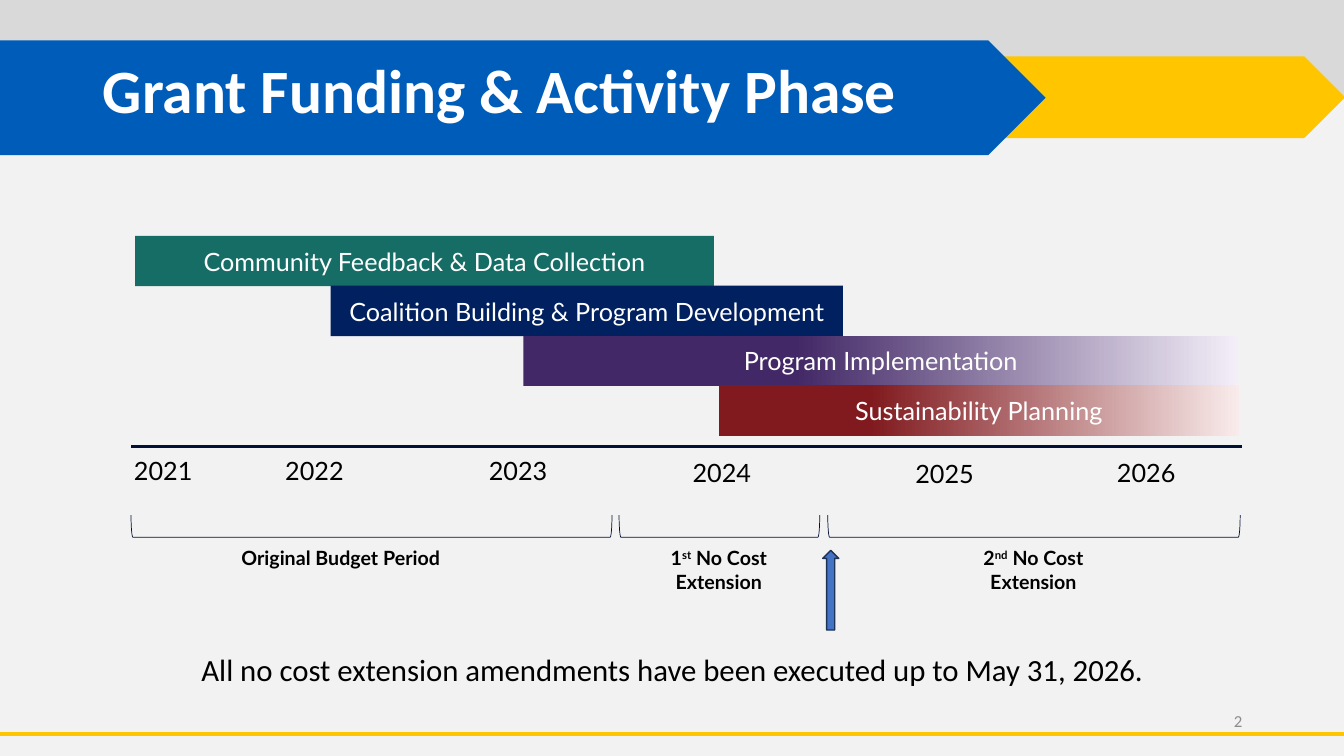
from dataclasses import dataclass

from lxml.etree import SubElement
from pptx import Presentation
from pptx.dml.color import RGBColor
from pptx.enum.shapes import MSO_CONNECTOR, MSO_SHAPE
from pptx.enum.text import MSO_ANCHOR, PP_ALIGN
from pptx.oxml.ns import qn
from pptx.util import Inches, Pt

TITLE = "Grant Funding & Activity Phase"
NOTE = "All no cost extension amendments have been executed up to May 31, 2026."
PAGE_NUMBER = "2"

# shape, left, top, width, height, fill
BANNER = [
    (MSO_SHAPE.RECTANGLE, 0, 0, 13.33, 0.95, "D9D9D9"),
    (MSO_SHAPE.PENTAGON, 7.09, 0.56, 6.25, 0.81, "FFC600"),
    (MSO_SHAPE.PENTAGON, 0, 0.4, 10.37, 1.14, "005CB9"),
]

# label, left, width, fill, (fade start, fade colour)
PHASES = [
    ("Community Feedback & Data Collection", 1.34, 5.74, "166D65", None),
    ("Coalition Building & Program Development", 3.28, 5.08, "002060", None),
    ("Program Implementation", 5.19, 7.09, "422866", (0.38, "F3EEF8")),
    ("Sustainability Planning", 7.13, 5.16, "801A1E", (0.29, "F9EBEB")),
]

# year, left, top
YEARS = [
    ("2021", 1.23, 4.47), ("2022", 2.73, 4.47), ("2023", 4.75, 4.47),
    ("2024", 6.77, 4.49), ("2025", 8.98, 4.5), ("2026", 10.98, 4.49),
]

# bracket left, bracket right, label left, label width, label as (text, raised) spans
PERIODS = [
    (1.3, 6.07, 2.24, 2.28, [("Original Budget Period", False)]),
    (6.14, 8.13, 6.46, 1.34, [("1", False), ("st", True), (" No Cost Extension", False)]),
    (8.21, 12.3, 9.58, 1.34, [("2", False), ("nd", True), (" No Cost Extension", False)]),
]


@dataclass(frozen=True)
class Theme:
    background: str = "F2F2F2"
    gold: str = "FFC600"
    axis: str = "011034"
    arrow: str = "4472C4"
    arrow_edge: str = "1E3256"
    white: str = "FFFFFF"
    black: str = "000000"
    grey: str = "8C8C8C"
    heading_font: str = "Calibri"
    chart_font: str = "Lato"
    title_size: int = 44
    note_size: int = 22
    chart_size: int = 18
    period_size: int = 14
    number_size: int = 12


THEME = Theme()
BAR_TOP, BAR_PITCH, BAR_HEIGHT = 2.34, 0.495, 0.5
BRACKET_TOP, BRACKET_DEPTH = 5.11, 0.22


def color(code):
    return RGBColor.from_string(code)


def write(shape, text, *, size, font=THEME.chart_font, ink=THEME.black, bold=False,
          align=PP_ALIGN.LEFT, anchor=MSO_ANCHOR.TOP, line_spacing=None):
    """Fill a shape with one paragraph; text is a string or (text, raised) spans."""
    frame = shape.text_frame
    frame.word_wrap = True
    frame.vertical_anchor = anchor
    para = frame.paragraphs[0]
    para.alignment = align
    para.line_spacing = line_spacing
    for words, raised in [(text, False)] if isinstance(text, str) else text:
        span = para.add_run()
        span.text = words
        span.font.name, span.font.size, span.font.bold = font, Pt(size), bold
        span.font.color.rgb = color(ink)
        if raised:
            span.font._element.set("baseline", "30000")


def add_text(page, text, left, top, width, height, **style):
    box = page.shapes.add_textbox(Inches(left), Inches(top), Inches(width), Inches(height))
    write(box, text, **style)


def add_block(page, kind, left, top, width, height, fill=None, line=None, weight=1):
    block = page.shapes.add_shape(
        kind, Inches(left), Inches(top), Inches(width), Inches(height))
    block.shadow.inherit = False
    if fill:
        block.fill.solid()
        block.fill.fore_color.rgb = color(fill)
    else:
        block.fill.background()
    if line:
        block.line.color.rgb = color(line)
        block.line.width = Pt(weight)
    else:
        block.line.fill.background()
    return block


def add_rule(page, left, right, y, ink, weight):
    rule = page.shapes.add_connector(
        MSO_CONNECTOR.STRAIGHT, Inches(left), Inches(y), Inches(right), Inches(y))
    rule.line.color.rgb = color(ink)
    rule.line.width = Pt(weight)
    SubElement(rule._element.spPr, qn("a:effectLst"))


def fade(block, start, first, last):
    block.fill.gradient()
    block.fill.gradient_angle = 0
    for stop, position, ink in zip(block.fill.gradient_stops, (start, 1), (first, last)):
        stop.position = position
        stop.color.rgb = color(ink)


def add_bracket(page, left, right):
    """Draw an upward-opening bracket: a left bracket turned about its centre."""
    span = right - left
    bracket = add_block(
        page, MSO_SHAPE.LEFT_BRACKET,
        (left + right - BRACKET_DEPTH) / 2, BRACKET_TOP + (BRACKET_DEPTH - span) / 2,
        BRACKET_DEPTH, span, line=THEME.axis, weight=0.5)
    bracket.rotation = 270


def add_heading(page):
    for part in BANNER:
        add_block(page, *part)
    add_rule(page, 0, 13.33, 7.28, THEME.gold, 3)
    title = page.shapes.title
    title.left, title.top = Inches(0.92), Inches(0.2)
    title.width, title.height = Inches(11.5), Inches(1.45)
    write(title, TITLE, size=THEME.title_size, font=THEME.heading_font, ink=THEME.white,
          bold=True, anchor=MSO_ANCHOR.MIDDLE, line_spacing=0.9)
    # Bring the title in front of the banner
    title._element.getparent().append(title._element)


def add_timeline(page):
    for row, (label, left, width, fill, fading) in enumerate(PHASES):
        bar = add_block(page, MSO_SHAPE.RECTANGLE, left, BAR_TOP + row * BAR_PITCH,
                        width, BAR_HEIGHT, fill)
        if fading:
            fade(bar, fading[0], fill, fading[1])
        write(bar, label, size=THEME.chart_size, ink=THEME.white,
              align=PP_ALIGN.CENTER, anchor=MSO_ANCHOR.MIDDLE)
    add_rule(page, 1.3, 12.32, 4.43, THEME.axis, 1.5)
    for year, left, top in YEARS:
        add_text(page, year, left, top, 1.31, 0.49, size=THEME.chart_size)
    for start, end, left, width, label in PERIODS:
        add_bracket(page, start, end)
        add_text(page, label, left, 5.37, width, 0.59, size=THEME.period_size,
                 bold=True, align=PP_ALIGN.CENTER)


def main():
    deck = Presentation()
    deck.slide_width, deck.slide_height = Inches(13.33), Inches(7.5)
    page = deck.slides.add_slide(deck.slide_layouts.get_by_name("Title Only"))
    page.background.fill.solid()
    page.background.fill.fore_color.rgb = color(THEME.background)
    add_heading(page)
    add_timeline(page)
    add_text(page, NOTE, 1.9, 6.41, 9.83, 0.47, size=THEME.note_size,
             font=THEME.heading_font)
    add_block(page, MSO_SHAPE.UP_ARROW, 8.16, 5.46, 0.16, 0.79,
              THEME.arrow, THEME.arrow_edge)
    add_text(page, PAGE_NUMBER, 9.42, 6.95, 3, 0.4, size=THEME.number_size,
             font=THEME.heading_font, ink=THEME.grey, align=PP_ALIGN.RIGHT,
             anchor=MSO_ANCHOR.MIDDLE)
    deck.save("out.pptx")


if __name__ == "__main__":
    main()
